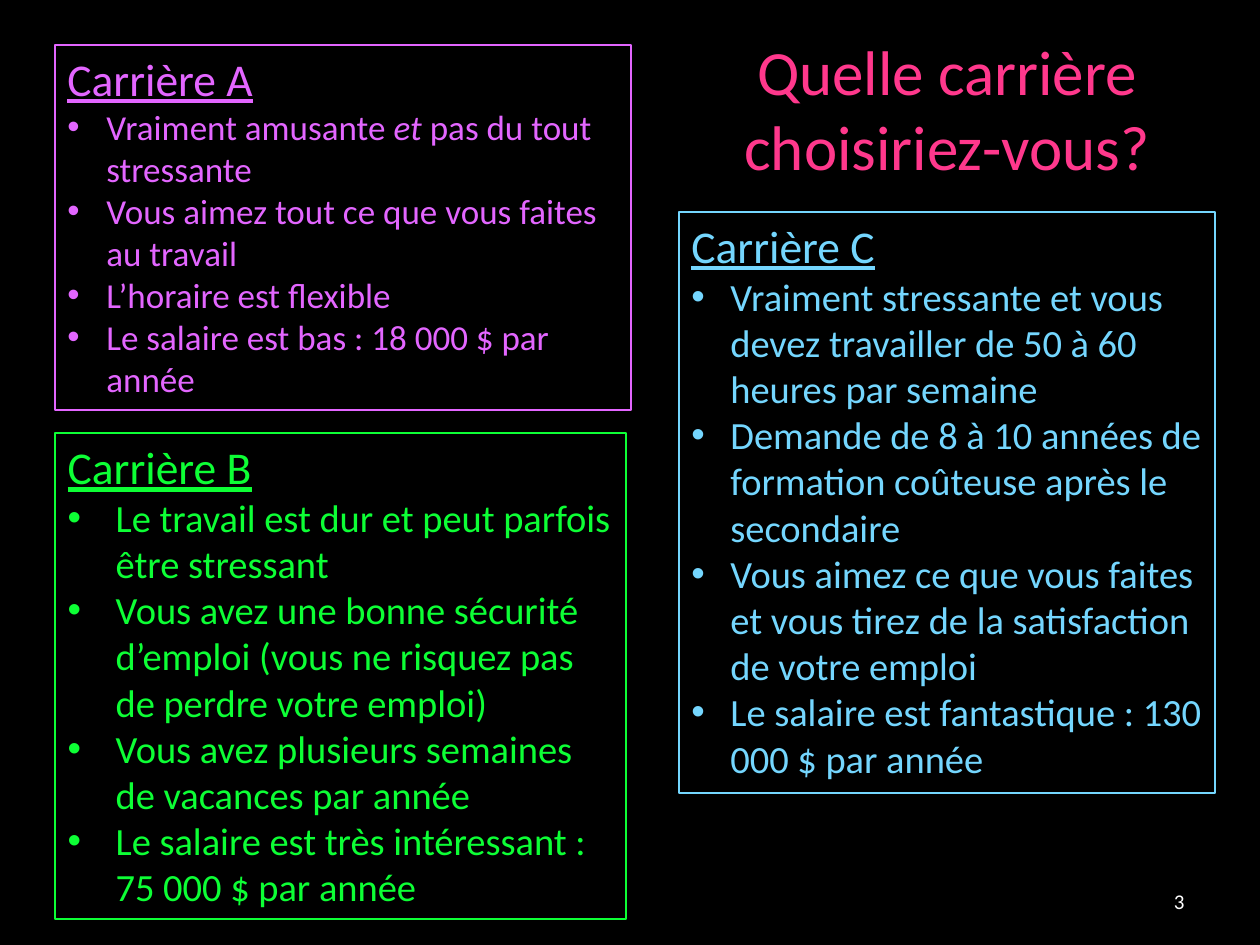
from dataclasses import dataclass

from lxml import etree
from pptx import Presentation
from pptx.dml.color import RGBColor
from pptx.enum.text import MSO_ANCHOR, MSO_AUTO_SIZE, PP_ALIGN
from pptx.oxml.ns import qn
from pptx.util import Emu, Pt

TOP, MIDDLE = MSO_ANCHOR.TOP, MSO_ANCHOR.MIDDLE
LEFT, CENTER, RIGHT = PP_ALIGN.LEFT, PP_ALIGN.CENTER, PP_ALIGN.RIGHT
NO_FIT = MSO_AUTO_SIZE.NONE
PX = 914400 / 126


@dataclass(frozen=True)
class Theme:
    font: str = "Calibri"
    background: str = "000000"
    title: str = "FF388C"
    number: str = "FFFFFF"
    purple: str = "E366FF"
    green: str = "0DFF35"
    blue: str = "74D6FE"
    title_size: int = 36
    heading_size: int = 26
    list_size: int = 22
    small_list_size: int = 20
    number_size: int = 12
    line_width: float = 0.75


@dataclass(frozen=True)
class Box:
    x: int
    y: int
    w: int
    h: int


@dataclass(frozen=True)
class Run:
    text: str
    italic: bool = False


@dataclass(frozen=True)
class Career:
    heading: str
    box: Box
    color: str
    size: int
    indent: int
    items: tuple[tuple[Run, ...], ...]


THEME = Theme()

CAREERS = (
    Career("Carrière B", Box(55, 433, 571, 486), THEME.green, THEME.list_size, 48, (
        (Run("Le travail est dur et peut parfois être stressant"),),
        (Run("Vous avez une bonne sécurité d’emploi (vous ne risquez pas de perdre votre emploi)"),),
        (Run("Vous avez plusieurs semaines de vacances par année"),),
        (Run("Le salaire est très intéressant : 75 000 $ par année"),),
    )),
    Career("Carrière C", Box(679, 212, 536, 581), THEME.blue, THEME.list_size, 39, (
        (Run("Vraiment stressante et vous devez travailler de 50 à 60 heures par semaine"),),
        (Run("Demande de 8 à 10 années de formation coûteuse après le secondaire"),),
        (Run("Vous aimez ce que vous faites et vous tirez de la satisfaction de votre emploi"),),
        (Run("Le salaire est fantastique : 130 000 $ par année"),),
    )),
    Career("Carrière A", Box(55, 45, 576, 365), THEME.purple, THEME.small_list_size, 39, (
        (Run("Vraiment amusante "), Run("et ", italic=True), Run("pas du tout stressante")),
        (Run("Vous aimez tout ce que vous faites au travail"),),
        (Run("L’horaire est flexible"),),
        (Run("Le salaire est bas : 18 000 $ par année"),),
    )),
)


def px(n: int) -> Emu:
    return Emu(round(n * PX))


def rgb(color: str) -> RGBColor:
    return RGBColor.from_string(color)


def place(sp, box: Box, anchor=TOP):
    """Move a shape to its box and return its empty text frame."""
    sp.left, sp.top, sp.width, sp.height = map(px, (box.x, box.y, box.w, box.h))
    tf = sp.text_frame
    tf.word_wrap = True
    tf.auto_size = NO_FIT
    tf.vertical_anchor = anchor
    return tf


def add_run(p, text: str, size: int, color: str, underline=False, italic=False) -> None:
    r = p.add_run()
    r.text = text
    r.font.name = THEME.font
    r.font.size = Pt(size)
    r.font.color.rgb = rgb(color)
    r.font.underline = underline
    r.font.italic = italic


def set_bullet(p, indent: int) -> None:
    """Give a paragraph a hanging bullet, or none when indent is 0."""
    pPr = p._p.get_or_add_pPr()
    pPr.set("marL", str(px(indent)))
    pPr.set("indent", str(px(-indent)))
    if indent:
        etree.SubElement(pPr, qn("a:buFont"), typeface="Arial")
        etree.SubElement(pPr, qn("a:buChar"), char="•")
    else:
        etree.SubElement(pPr, qn("a:buNone"))


def draw_career(sp, career: Career) -> None:
    tf = place(sp, career.box)
    sp.line.color.rgb = rgb(career.color)
    sp.line.width = Pt(THEME.line_width)
    p = tf.paragraphs[0]
    p.alignment, p.space_before = LEFT, Pt(0)
    set_bullet(p, 0)
    add_run(p, career.heading, THEME.heading_size, career.color, underline=True)
    for item in career.items:
        p = tf.add_paragraph()
        p.alignment, p.space_before = LEFT, Pt(0)
        set_bullet(p, career.indent)
        for run in item:
            add_run(p, run.text, career.size, career.color, italic=run.italic)


def draw_label(sp, box: Box, text: str, size: int, color: str, align, anchor=TOP) -> None:
    p = place(sp, box, anchor).paragraphs[0]
    p.alignment = align
    add_run(p, text, size, color)


def main() -> None:
    prs = Presentation()
    prs.slide_width, prs.slide_height = px(1260), px(945)
    s = prs.slides.add_slide(prs.slide_layouts[1])
    s.background.fill.solid()
    s.background.fill.fore_color.rgb = rgb(THEME.background)

    # Career boxes: the first fills the body placeholder
    body, *others = CAREERS
    draw_career(s.placeholders[1], body)
    for career in others:
        draw_career(s.shapes.add_textbox(0, 0, 0, 0), career)

    # Title
    draw_label(s.shapes.title, Box(679, 26, 536, 165), "Quelle carrière choisiriez-vous?",
               THEME.title_size, THEME.title, CENTER)

    # Slide number
    draw_label(s.shapes.add_textbox(0, 0, 0, 0), Box(903, 876, 294, 50), "3",
               THEME.number_size, THEME.number, RIGHT, MIDDLE)

    prs.save("out.pptx")


if __name__ == "__main__":
    main()
